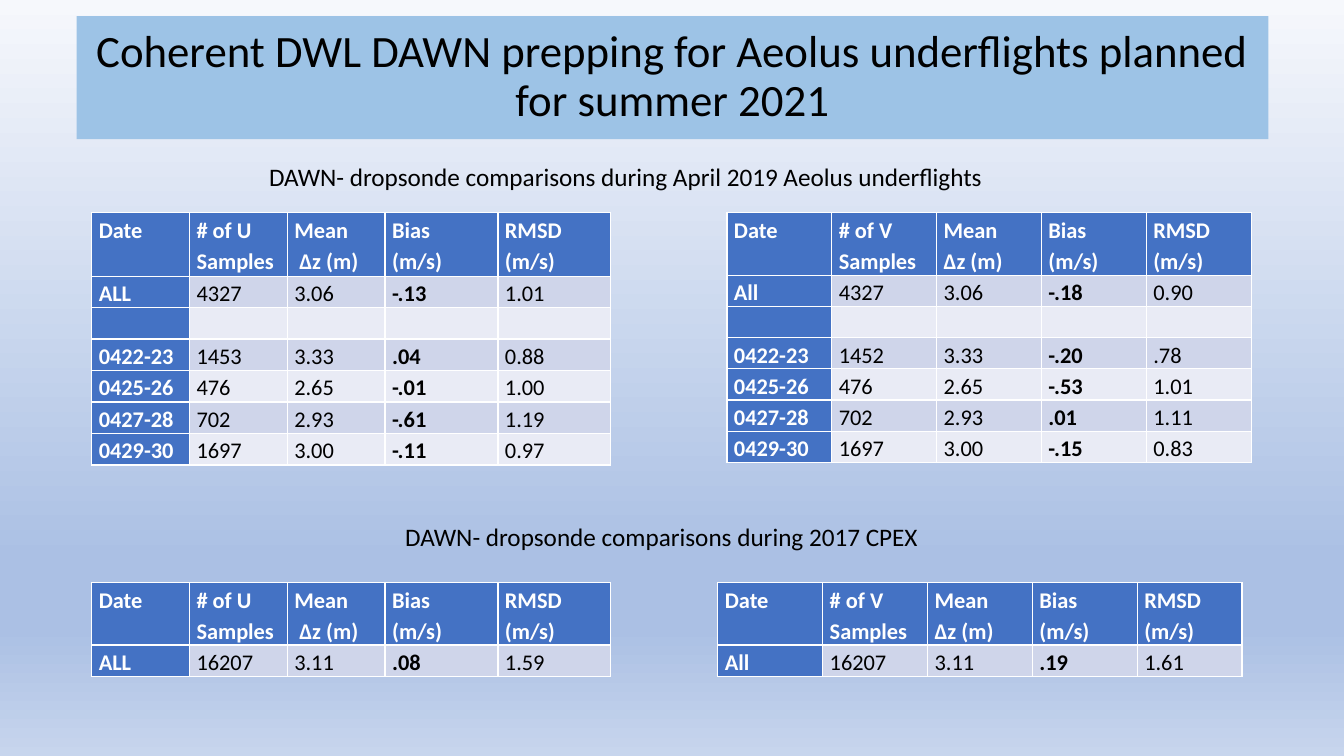
import pptx
import pptx.util
import pptx.dml.color
import pptx.enum.text
import pptx.oxml.ns
from lxml import etree

Inches = pptx.util.Inches
RGBColor = pptx.dml.color.RGBColor
qn = pptx.oxml.ns.qn

BLACK = RGBColor(0x00, 0x00, 0x00)
WHITE = RGBColor(0xFF, 0xFF, 0xFF)
BANNER = RGBColor(0x9D, 0xC3, 0xE6)
HEADER = RGBColor(0x44, 0x72, 0xC4)
BANDS = [RGBColor(0xE9, 0xEB, 0xF5), RGBColor(0xCF, 0xD5, 0xEA)]
SKY = [
    (0, RGBColor(0xF6, 0xF8, 0xFC)),
    (74, RGBColor(0xAB, 0xC0, 0xE4)),
    (83, RGBColor(0xAB, 0xC0, 0xE4)),
    (100, RGBColor(0xC7, 0xD5, 0xED)),
]
FONT = "Calibri"
BIAS_COLUMN = 3

U_HEAD = ["Date", "# of U\nSamples", "Mean\n ∆z (m)", "Bias\n(m/s)", "RMSD\n(m/s)"]
V_HEAD = ["Date", "# of V\nSamples", "Mean\n∆z (m)", "Bias\n(m/s)", "RMSD\n(m/s)"]
U_WIDTHS = [0.97, 0.97, 0.97, 1.12, 1.12]
V_WIDTHS = [1.04] * 5
U_2019 = [
    U_HEAD,
    ["ALL", "4327", "3.06", "-.13", "1.01"],
    [""] * 5,
    ["0422-23", "1453", "3.33", ".04", "0.88"],
    ["0425-26", "476", "2.65", "-.01", "1.00"],
    ["0427-28", "702", "2.93", "-.61", "1.19"],
    ["0429-30", "1697", "3.00", "-.11", "0.97"],
]
V_2019 = [
    V_HEAD,
    ["All", "4327", "3.06", "-.18", "0.90"],
    [""] * 5,
    ["0422-23", "1452", "3.33", "-.20", ".78"],
    ["0425-26", "476", "2.65", "-.53", "1.01"],
    ["0427-28", "702", "2.93", ".01", "1.11"],
    ["0429-30", "1697", "3.00", "-.15", "0.83"],
]
U_2017 = [U_HEAD, ["ALL", "16207", "3.11", ".08", "1.59"]]
V_2017 = [V_HEAD, ["All", "16207", "3.11", ".19", "1.61"]]


def set_font(p, size, color, bold=False):
    """Set the font of a whole paragraph."""
    p.font.name = FONT
    p.font.size = pptx.util.Pt(size)
    p.font.color.rgb = color
    p.font.bold = bold


def paint_background(s):
    """Fill the slide with the vertical sky gradient."""
    fill = s.background.fill
    fill.gradient()
    fill.gradient_angle = 270
    stops = next(s.element.iter(qn("a:gsLst")))
    for stop in list(stops):
        stops.remove(stop)
    for percent, color in SKY:
        stop = etree.SubElement(stops, qn("a:gs"), pos=str(percent * 1000))
        etree.SubElement(stop, qn("a:srgbClr"), val=str(color))


def add_title(s, text, x, y, w, h):
    """Place the title placeholder as a filled banner."""
    sp = s.shapes.title
    sp.left, sp.top, sp.width, sp.height = map(Inches, (x, y, w, h))
    sp.fill.solid()
    sp.fill.fore_color.rgb = BANNER
    tf = sp.text_frame
    tf.text = text
    tf.auto_size = pptx.enum.text.MSO_AUTO_SIZE.NONE
    tf.vertical_anchor = pptx.enum.text.MSO_ANCHOR.MIDDLE
    p = tf.paragraphs[0]
    p.alignment = pptx.enum.text.PP_ALIGN.CENTER
    p.line_spacing = 0.9
    set_font(p, 32, BLACK)


def add_caption(s, text, x, y, w, h):
    """Add the heading above a pair of tables."""
    tf = s.shapes.add_textbox(*map(Inches, (x, y, w, h))).text_frame
    tf.word_wrap = True
    tf.text = text
    set_font(tf.paragraphs[0], 18, BLACK)


def fill_cell(cell, text, row, column):
    """Write one table cell and style it by its place in the grid."""
    heading = row == 0 or column == 0
    cell.fill.solid()
    cell.fill.fore_color.rgb = HEADER if heading else BANDS[row % 2]
    cell.margin_left = cell.margin_right = Inches(0.07)
    cell.margin_top = cell.margin_bottom = 0
    cell.text = text
    for p in cell.text_frame.paragraphs:
        p.line_spacing = 1.15 if text else 1.0
        set_font(p, 16, WHITE if heading else BLACK, heading or column == BIAS_COLUMN)


def add_comparison(s, rows, widths, x, y, head_height, row_height=0.31):
    """Add a wind comparison table with its top left corner at x, y."""
    height = head_height + row_height * (len(rows) - 1)
    box = map(Inches, (x, y, sum(widths), height))
    table = s.shapes.add_table(len(rows), len(widths), *box).table
    table.first_col = True
    for column, width in zip(table.columns, widths):
        column.width = Inches(width)
    for i, values in enumerate(rows):
        table.rows[i].height = Inches(row_height if i else head_height)
        for j, value in enumerate(values):
            fill_cell(table.cell(i, j), value, i, j)


def main():
    """Build the slide and save it."""
    prs = pptx.Presentation()
    prs.slide_width, prs.slide_height = Inches(13.33), Inches(7.5)
    s = prs.slides.add_slide(prs.slide_layouts[5])
    paint_background(s)
    add_title(
        s,
        "Coherent DWL DAWN prepping for Aeolus underflights planned for summer 2021",
        0.76, 0.16, 11.82, 1.22,
    )
    add_comparison(s, U_2019, U_WIDTHS, 0.91, 2.11, 0.63)
    add_caption(
        s,
        "DAWN- dropsonde comparisons during April 2019 Aeolus underflights",
        2.57, 1.55, 7.42, 0.4,
    )
    add_comparison(s, V_2019, V_WIDTHS, 7.21, 2.11, 0.62)
    add_caption(s, "DAWN- dropsonde comparisons during 2017 CPEX", 3.92, 5.12, 5.5, 0.4)
    add_comparison(s, U_2017, U_WIDTHS, 0.91, 5.78, 0.62)
    add_comparison(s, V_2017, V_WIDTHS, 7.12, 5.78, 0.62)
    prs.save("out.pptx")


if __name__ == "__main__":
    main()
